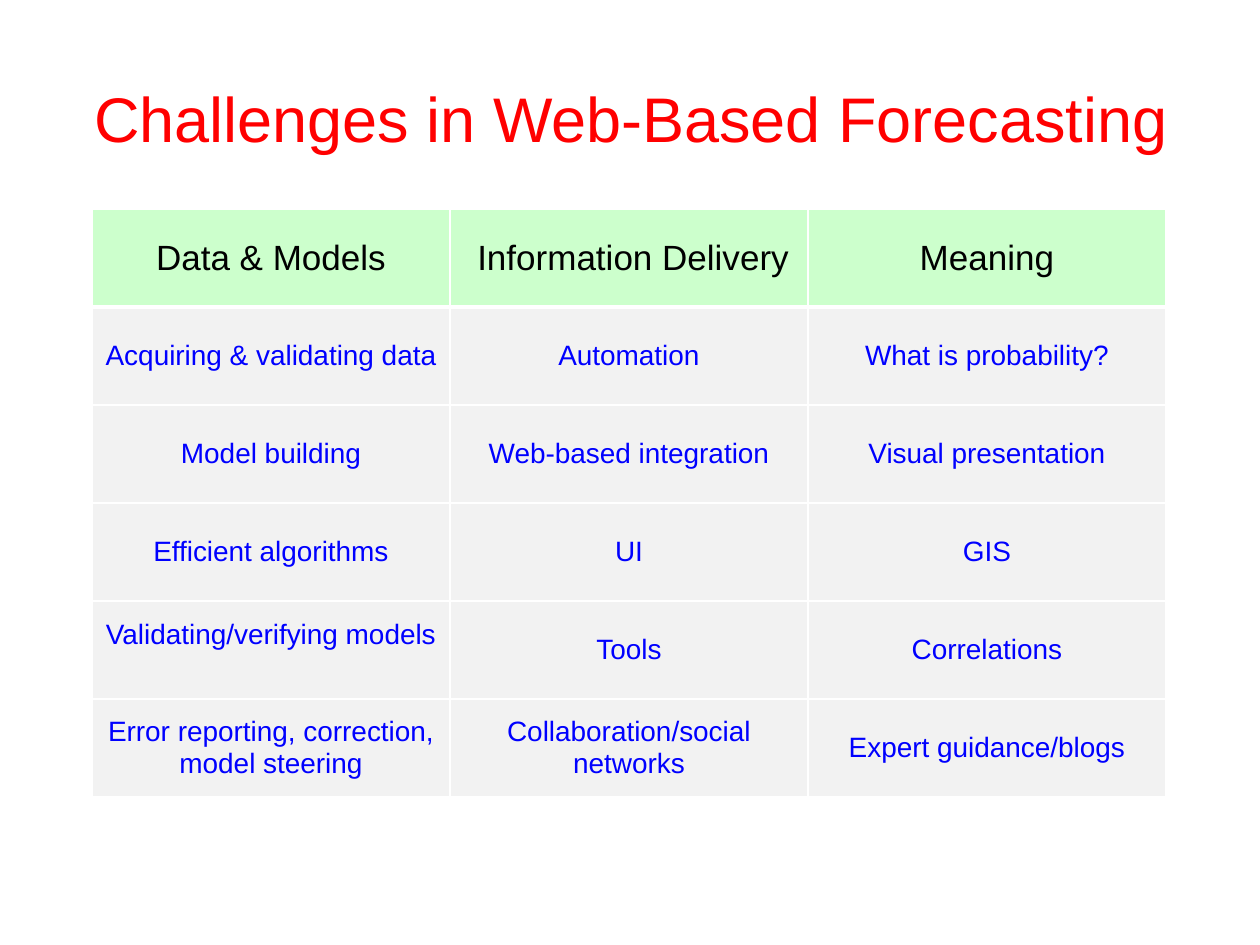
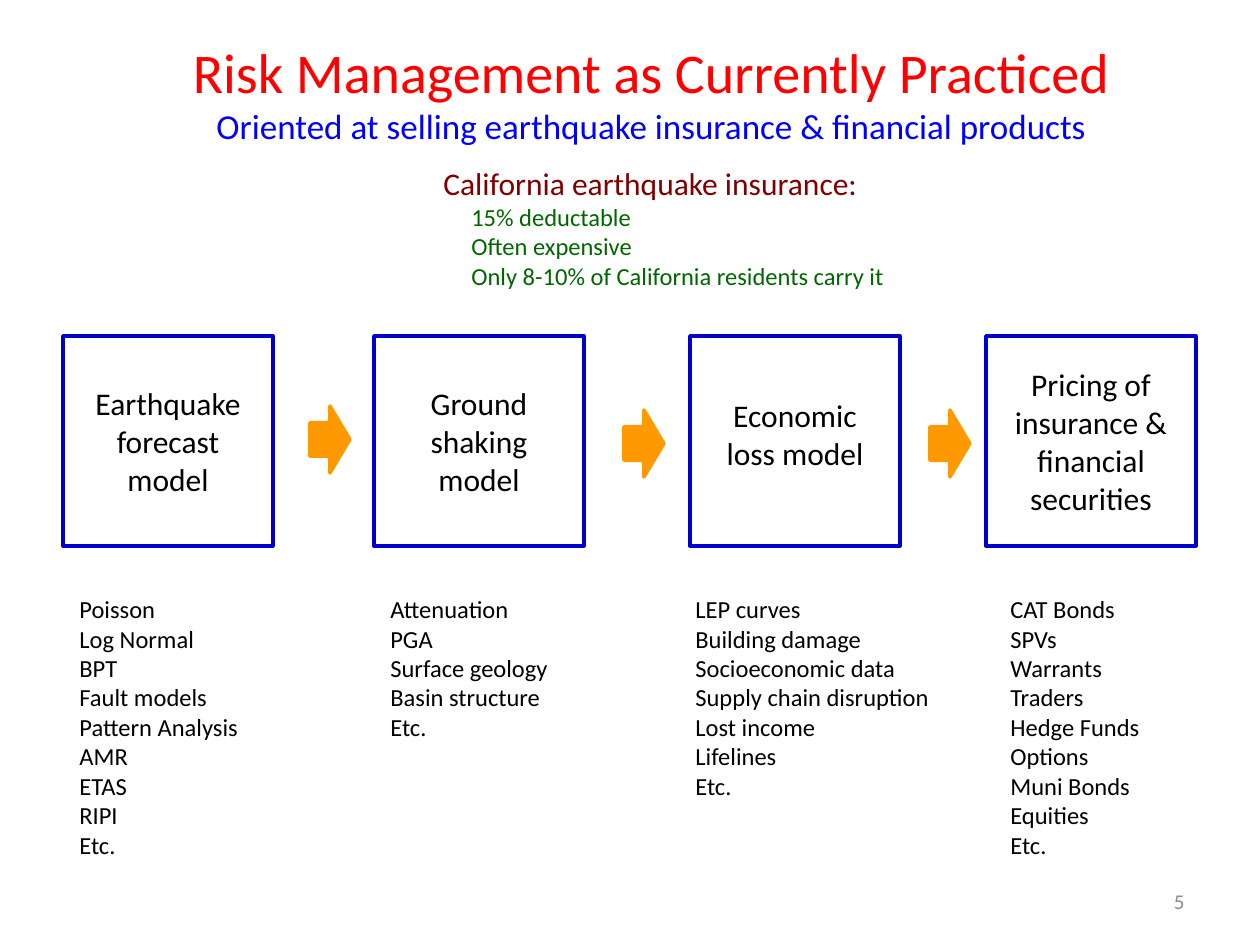
import dataclasses

import lxml.etree
import pptx
import pptx.dml.color
import pptx.enum.shapes
import pptx.enum.text
import pptx.oxml.ns
import pptx.util

ALIGN = pptx.enum.text.PP_ALIGN
ANCHOR = pptx.enum.text.MSO_ANCHOR
SHAPE = pptx.enum.shapes.MSO_SHAPE
PX = 914400 // 126


@dataclasses.dataclass(frozen=True)
class Theme:
    red: str = "FF0000"
    blue: str = "0000FF"
    box_blue: str = "0000CC"
    maroon: str = "800000"
    green: str = "006600"
    orange: str = "FF9900"
    black: str = "000000"
    grey: str = "8C8C8C"
    white: str = "FFFFFF"
    head_fill: str = "CCFFCC"
    body_fill: str = "F2F2F2"
    arial: str = "Arial"
    calibri: str = "Calibri"
    title: int = 36
    flow_title: int = 32
    head: int = 20
    label: int = 18
    cell: int = 16
    small: int = 14
    number: int = 12


T = Theme()

CHALLENGES = [
    ("Data & Models", "Information Delivery", "Meaning"),
    ("Acquiring & validating data", "Automation", "What is probability?"),
    ("Model building", "Web-based integration", "Visual presentation"),
    ("Efficient algorithms", "UI", "GIS"),
    ("Validating/verifying models", "Tools", "Correlations"),
    ("Error reporting, correction, model steering",
     "Collaboration/social networks", "Expert guidance/blogs"),
]

# Stage: box left, label, upward shift of label, list left, list width, list items
STAGES = [
    (63, "Earthquake forecast model", 0, 67, 199,
     ["Poisson", "Log Normal", "BPT", "Fault models", "Pattern Analysis",
      "AMR", "ETAS", "RIPI", "Etc."]),
    (374, "Ground shaking model", 0, 378, 199,
     ["Attenuation", "PGA", "Surface geology", "Basin structure", "Etc."]),
    (690, "Economic loss model", 7, 683, 273,
     ["LEP curves", "Building damage", "Socioeconomic data",
      "Supply chain disruption", "Lost income", "Lifelines", "Etc."]),
    (986, "Pricing of insurance & financial securities", 0, 998, 199,
     ["CAT Bonds", "SPVs", "Warrants", "Traders", "Hedge Funds", "Options",
      "Muni Bonds", "Equities", "Etc."]),
]
ARROWS = [(310, 406), (624, 410), (930, 410)]


def px(n):
    return pptx.util.Emu(n * PX)


def rgb(color):
    return pptx.dml.color.RGBColor.from_string(color)


def write(tf, lines, font, align=ALIGN.LEFT):
    """Fill a text frame with (text, size, colour) lines, one paragraph each."""
    for i, (text, size, color) in enumerate(lines):
        p = tf.paragraphs[0] if i == 0 else tf.add_paragraph()
        p.alignment = align
        r = p.add_run()
        r.text = text
        r.font.name = font
        r.font.size = pptx.util.Pt(size)
        r.font.bold = False
        r.font.color.rgb = rgb(color)


def add_title(slide, box, lines, font, anchor):
    sp = slide.shapes.title
    sp.left, sp.top, sp.width, sp.height = map(px, box)
    tf = sp.text_frame
    tf.auto_size = pptx.enum.text.MSO_AUTO_SIZE.NONE
    tf.vertical_anchor = anchor
    write(tf, lines, font, ALIGN.CENTER)
    for p in tf.paragraphs:
        p.space_before = pptx.util.Pt(0)


def add_text(slide, box, lines, align=ALIGN.LEFT, anchor=ANCHOR.TOP, wrap=True):
    tf = slide.shapes.add_textbox(*map(px, box)).text_frame
    tf.word_wrap = wrap
    tf.vertical_anchor = anchor
    write(tf, lines, T.calibri, align)
    return tf


def add_shape(slide, kind, box, line, fill=None):
    sp = slide.shapes.add_shape(kind, *map(px, box))
    sp.shadow.inherit = False
    if fill:
        sp.fill.solid()
        sp.fill.fore_color.rgb = rgb(fill)
    else:
        sp.fill.background()
    sp.line.color.rgb = rgb(line)
    sp.line.width = pptx.util.Pt(2)
    return sp


def set_borders(cell, color, bottom):
    """Draw 1 pt cell borders, with the bottom one of the given width."""
    qn = pptx.oxml.ns.qn
    tc_pr = cell._tc.get_or_add_tcPr()
    for i, (side, width) in enumerate(zip("LRTB", (1, 1, 1, bottom))):
        ln = lxml.etree.Element(qn(f"a:ln{side}"), w=str(pptx.util.Pt(width)))
        fill = lxml.etree.SubElement(ln, qn("a:solidFill"))
        lxml.etree.SubElement(fill, qn("a:srgbClr"), val=color)
        tc_pr.insert(i, ln)


def add_challenge_table(slide, box):
    rows, cols = len(CHALLENGES), len(CHALLENGES[0])
    table = slide.shapes.add_table(rows, cols, *map(px, box)).table
    table.horz_banding = False
    for r, row in enumerate(CHALLENGES):
        size, color, fill = ((T.cell, T.blue, T.body_fill) if r
                             else (T.head, T.black, T.head_fill))
        for c, text in enumerate(row):
            cell = table.cell(r, c)
            cell.vertical_anchor = ANCHOR.MIDDLE
            cell.fill.solid()
            cell.fill.fore_color.rgb = rgb(fill)
            write(cell.text_frame, [(text, size, color)], T.arial, ALIGN.CENTER)
            set_borders(cell, T.white, 1 if r else 3)
    table.cell(0, 1).margin_left = px(21)
    table.cell(4, 0).margin_bottom = px(37)


def add_stage(slide, top, stage):
    """Place a process box with its label, and the list that goes below it."""
    left, label, shift, list_left, list_width, items = stage
    sp = add_shape(slide, SHAPE.RECTANGLE, (left, top, 210, 210), T.box_blue)
    tf = sp.text_frame
    tf.word_wrap = True
    tf.vertical_anchor = ANCHOR.MIDDLE
    tf.margin_left = tf.margin_right = px(20)
    tf.margin_bottom = px(6 + 2 * shift)
    write(tf, [(label, T.label, T.black)], T.calibri, ALIGN.CENTER)
    add_text(slide, (list_left, top + 252, list_width, 31 * len(items) + 6),
             [(item, T.small, T.black) for item in items])


def add_insurance_note(slide, box):
    facts = ["15% deductable", "Often expensive",
             "Only 8-10% of California residents carry it"]
    tf = add_text(slide, box,
                  [("California earthquake insurance:", T.label, T.maroon)]
                  + [(fact, T.small, T.green) for fact in facts], wrap=False)
    for p in tf.paragraphs[1:]:
        p._p.get_or_add_pPr().set("marL", str(px(28)))


def build_challenges(slide):
    add_title(slide, (64, 38, 1134, 158),
              [("Challenges in Web-Based Forecasting", T.title, T.red)],
              T.arial, ANCHOR.MIDDLE)
    add_challenge_table(slide, (92, 209, 1074, 588))


def build_risk_flow(slide):
    add_title(slide, (116, 31, 1071, 123),
              [("Risk Management as Currently Practiced", T.flow_title, T.red),
               ("Oriented at selling earthquake insurance & financial products",
                T.head, T.blue)],
              T.calibri, ANCHOR.TOP)
    add_insurance_note(slide, (431, 158, 469, 140))
    for stage in STAGES:
        add_stage(slide, 336, stage)
    for left, top in ARROWS:
        add_shape(slide, SHAPE.RIGHT_ARROW, (left, top, 40, 67), T.orange, T.orange)
    add_text(slide, (903, 876, 294, 50), [("5", T.number, T.grey)],
             ALIGN.RIGHT, ANCHOR.MIDDLE)


def main():
    prs = pptx.Presentation()
    prs.slide_width, prs.slide_height = px(1260), px(945)
    for build in (build_challenges, build_risk_flow):
        build(prs.slides.add_slide(prs.slide_layouts[5]))
    prs.save("out.pptx")


if __name__ == "__main__":
    main()
